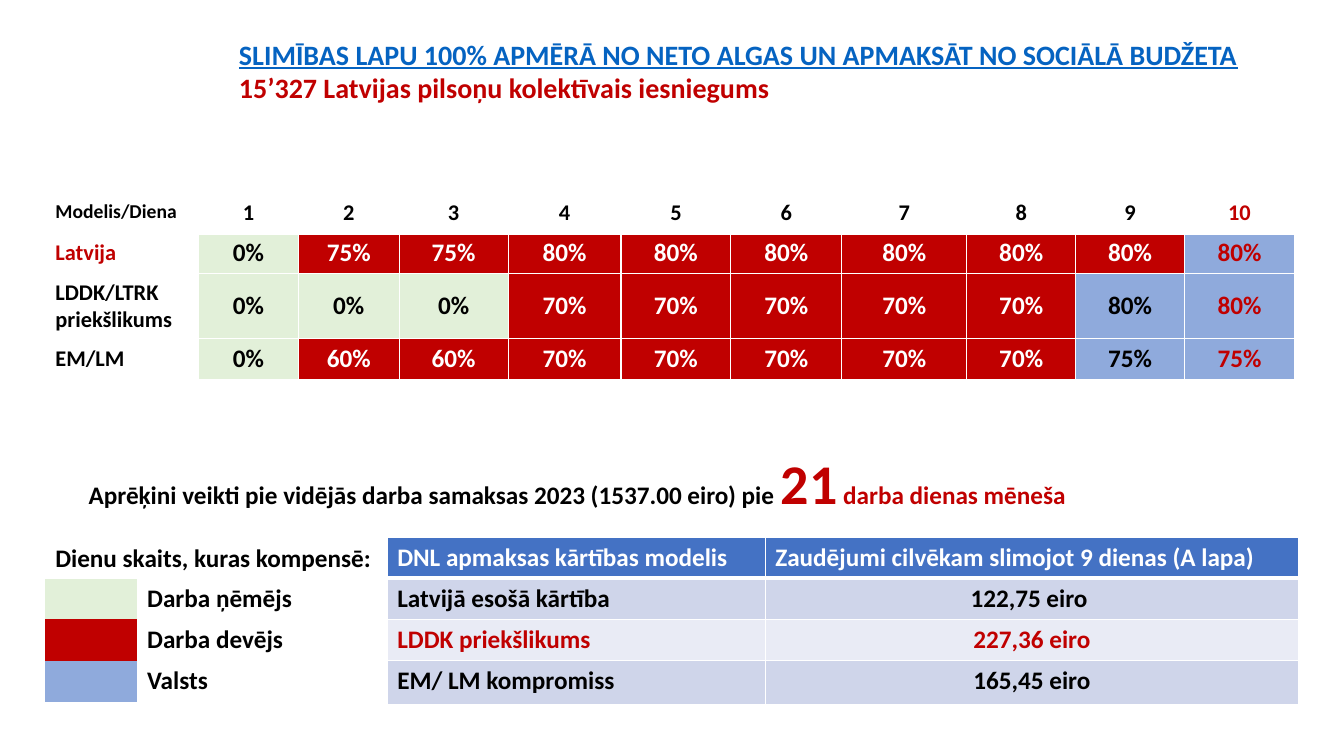
from dataclasses import dataclass

import pptx
import pptx.dml.color
import pptx.enum.text
import pptx.oxml.ns
import pptx.util
from lxml import etree
from pptx.util import Inches

ALIGN = pptx.enum.text.PP_ALIGN
ANCHOR = pptx.enum.text.MSO_ANCHOR


@dataclass(frozen=True)
class Theme:
    font: str = "Calibri"
    black: str = "000000"
    white: str = "FFFFFF"
    red: str = "C00000"
    green: str = "E2F0D9"
    blue: str = "8FAADC"
    link: str = "0563C1"
    header: str = "4472C4"
    band_dark: str = "CFD5EA"
    band_light: str = "E9EBF5"
    corner: int = 14
    label: int = 16
    body: int = 18
    title: int = 20
    accent: int = 40


THEME = Theme()

PAYERS = {
    "employee": (THEME.green, THEME.black),
    "employer": (THEME.red, THEME.white),
    "state": (THEME.blue, THEME.black),
}

MODELS = [
    ("Latvija", THEME.red, [0] + [75] * 2 + [80] * 7, (1, 8, 1)),
    ("LDDK/LTRK priekšlikums", THEME.black, [0] * 3 + [70] * 5 + [80] * 2, (3, 5, 2)),
    ("EM/LM", THEME.black, [0] + [60] * 2 + [70] * 5 + [75] * 2, (1, 7, 2)),
]

LOSSES = [
    ("Latvijā esošā kārtība", "122,75 eiro ", THEME.black, THEME.band_dark),
    ("LDDK priekšlikums", "227,36 eiro", THEME.red, THEME.band_light),
    ("EM/ LM kompromiss", "165,45 eiro", THEME.black, THEME.band_dark),
]


def rgb(color):
    return pptx.dml.color.RGBColor.from_string(color)


def format_run(run, size, color, underline=False):
    run.font.name = THEME.font
    run.font.size = pptx.util.Pt(size)
    run.font.bold = True
    run.font.underline = underline
    run.font.color.rgb = rgb(color)


def set_border(cell, bottom_width):
    properties = cell._tc.get_or_add_tcPr()
    for side in "LRTB":
        line = etree.SubElement(properties, pptx.oxml.ns.qn(f"a:ln{side}"))
        if bottom_width:
            width = bottom_width if side == "B" else 1
            line.set("w", str(pptx.util.Pt(width)))
            fill = etree.SubElement(line, pptx.oxml.ns.qn("a:solidFill"))
            color = etree.SubElement(fill, pptx.oxml.ns.qn("a:srgbClr"))
            color.set("val", THEME.white)
        else:
            etree.SubElement(line, pptx.oxml.ns.qn("a:noFill"))


def fill_cell(cell, text="", size=THEME.body, color=THEME.black, fill=None,
              align=ALIGN.LEFT, anchor=ANCHOR.TOP, border=1):
    set_border(cell, border)
    if fill:
        cell.fill.solid()
        cell.fill.fore_color.rgb = rgb(fill)
    else:
        cell.fill.background()
    cell.vertical_anchor = anchor
    if text:
        cell.text_frame.text = text
        paragraph = cell.text_frame.paragraphs[0]
        paragraph.alignment = align
        format_run(paragraph.runs[0], size, color)


def add_table(slide, left, top, widths, heights):
    table = slide.shapes.add_table(
        len(heights), len(widths), Inches(left), Inches(top),
        Inches(sum(widths)), Inches(sum(heights))).table
    table.first_row = False
    table.horz_banding = False
    for column, width in zip(table.columns, widths):
        column.width = Inches(width)
    for row, height in zip(table.rows, heights):
        row.height = Inches(height)
    return table


def add_model_table(slide):
    table = add_table(slide, 0.45, 1.93,
                      [1.52, 0.99, 1, 1.08, 1.12, 1.09, 1.1, 1.24, 1.08, 1.08, 1.09],
                      [0.38, 0.39, 0.63, 0.4, 0.6])
    fill_cell(table.cell(0, 0), "Modelis/Diena", THEME.corner, fill=THEME.white, border=3)
    for day in range(1, 11):
        color = THEME.red if day == 10 else THEME.black
        fill_cell(table.cell(0, day), str(day), THEME.label, color,
                  align=ALIGN.CENTER, border=3)
    for row, (name, name_color, rates, spans) in enumerate(MODELS, 1):
        fill_cell(table.cell(row, 0), name, THEME.label, name_color, THEME.white,
                  anchor=ANCHOR.MIDDLE)
        payers = [payer for payer, span in zip(PAYERS, spans) for _ in range(span)]
        for day, (rate, payer) in enumerate(zip(rates, payers), 1):
            fill, color = PAYERS[payer]
            fill_cell(table.cell(row, day), f"{rate}%", THEME.body,
                      THEME.red if day == 10 else color, fill,
                      ALIGN.CENTER, ANCHOR.MIDDLE)
    table.cell(4, 0).merge(table.cell(4, 10))
    fill_cell(table.cell(4, 0), fill=THEME.white)


def add_legend(slide):
    table = add_table(slide, 0.45, 5.74, [0.91, 2.18], [0.4, 0.41, 0.41])
    names = ["Darba ņēmējs", "Darba devējs", "Valsts"]
    for row, (name, (fill, _)) in enumerate(zip(names, PAYERS.values())):
        fill_cell(table.cell(row, 0), fill=fill, border=0)
        fill_cell(table.cell(row, 1), name, border=0)


def add_loss_table(slide):
    table = add_table(slide, 3.84, 5.33, [3.75, 5.29], [0.4, 0.41, 0.4, 0.44])
    headings = ["DNL apmaksas kārtības modelis",
                "Zaudējumi cilvēkam slimojot 9 dienas (A lapa)"]
    for column, heading in enumerate(headings):
        fill_cell(table.cell(0, column), heading, color=THEME.white,
                  fill=THEME.header, border=3)
    for row, (name, loss, color, fill) in enumerate(LOSSES, 1):
        fill_cell(table.cell(row, 0), name, color=color, fill=fill)
        fill_cell(table.cell(row, 1), loss, color=color, fill=fill, align=ALIGN.CENTER)


def add_text(slide, left, top, width, height, runs, wrap=True):
    box = slide.shapes.add_textbox(Inches(left), Inches(top), Inches(width), Inches(height))
    box.text_frame.word_wrap = wrap
    paragraph = box.text_frame.paragraphs[0]
    for text, size, color in runs:
        run = paragraph.add_run()
        run.text = text
        format_run(run, size, color)


def set_title(slide):
    title = slide.shapes.title
    title.left, title.top = Inches(2.27), Inches(0.32)
    title.width, title.height = Inches(10.57), Inches(0.77)
    frame = title.text_frame
    frame.text = ("SLIMĪBAS LAPU 100% APMĒRĀ NO NETO ALGAS UN APMAKSĀT NO SOCIĀLĀ BUDŽETA\n"
                  "15’327 Latvijas pilsoņu kolektīvais iesniegums")
    frame.word_wrap = True
    frame.auto_size = pptx.enum.text.MSO_AUTO_SIZE.NONE
    frame.vertical_anchor = ANCHOR.TOP
    styles = [(THEME.link, True), (THEME.red, False)]
    for paragraph, (color, underline) in zip(frame.paragraphs, styles):
        paragraph.alignment = ALIGN.LEFT
        format_run(paragraph.runs[0], THEME.title, color, underline)


def main():
    presentation = pptx.Presentation()
    presentation.slide_width = Inches(13.33)
    presentation.slide_height = Inches(7.5)
    slide = presentation.slides.add_slide(presentation.slide_layouts[5])
    set_title(slide)
    add_model_table(slide)
    add_legend(slide)
    add_loss_table(slide)
    add_text(slide, 0.45, 5.33, 3.36, 0.4,
             [("Dienu skaits, kuras kompensē:", THEME.body, THEME.black)], wrap=False)
    add_text(slide, 0.78, 4.4, 11.39, 1.08, [
        ("Aprēķini veikti pie vidējās darba samaksas 2023 (1537.00 eiro) pie ",
         THEME.body, THEME.black),
        ("21", THEME.accent, THEME.red),
        (" darba dienas mēneša", THEME.body, THEME.red),
    ])
    presentation.save("out.pptx")


if __name__ == "__main__":
    main()
